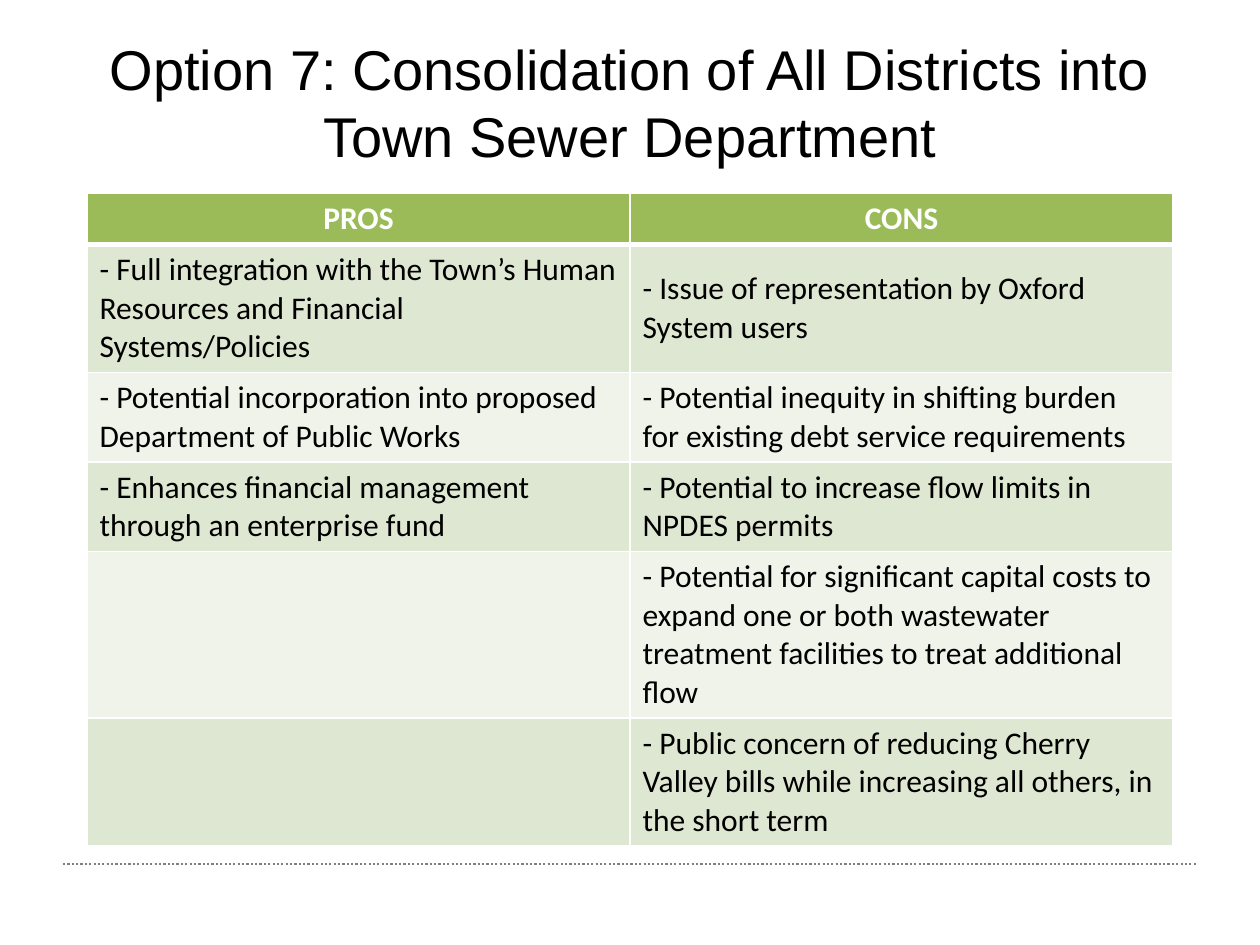
from typing import NamedTuple

from lxml import etree
from pptx import Presentation
from pptx.dml.color import RGBColor
from pptx.enum.dml import MSO_LINE
from pptx.enum.shapes import MSO_CONNECTOR
from pptx.enum.text import MSO_ANCHOR, PP_ALIGN
from pptx.oxml.ns import qn
from pptx.util import Inches, Pt

MIDDLE = MSO_ANCHOR.MIDDLE
CENTER = PP_ALIGN.CENTER
LEFT = PP_ALIGN.LEFT
STRAIGHT = MSO_CONNECTOR.STRAIGHT
DOTTED = MSO_LINE.ROUND_DOT

BLACK = "000000"
WHITE = "FFFFFF"
GRAY = "808080"
GREEN = "9BBB59"
BANDS = ("DEE7D1", "EFF3EA")

MARGIN = 0.69
CONTENT_WIDTH = 8.62
TABLE_TOP = 1.53
ROW_HEIGHT = 0.41
THIN, THICK = 1, 3


class Comparison(NamedTuple):
    pro: str
    con: str


HEADER = Comparison("PROS", "CONS")
COMPARISONS = [
    Comparison(
        "- Full integration with the Town’s Human Resources and Financial Systems/Policies",
        "- Issue of representation by Oxford System users",
    ),
    Comparison(
        "- Potential incorporation into proposed Department of Public Works",
        "- Potential inequity in shifting burden for existing debt service requirements",
    ),
    Comparison(
        "- Enhances financial management through an enterprise fund",
        "- Potential to increase flow limits in NPDES permits",
    ),
    Comparison(
        "",
        "- Potential for significant capital costs to expand one or both wastewater "
        "treatment facilities to treat additional flow",
    ),
    Comparison(
        "",
        "- Public concern of reducing Cherry Valley bills while increasing all others, "
        "in the short term",
    ),
]


def rgb(color: str) -> RGBColor:
    return RGBColor.from_string(color)


def format_paragraph(paragraph, font_name, size, color, alignment, bold=False) -> None:
    paragraph.alignment = alignment
    font = paragraph.font
    font.name = font_name
    font.size = Pt(size)
    font.bold = bold
    font.color.rgb = rgb(color)


def add_title(slide, text: str) -> None:
    title = slide.shapes.title
    title.left, title.top = Inches(MARGIN), Inches(0.08)
    title.width, title.height = Inches(CONTENT_WIDTH), Inches(1.45)
    frame = title.text_frame
    frame.word_wrap = True
    frame.vertical_anchor = MIDDLE
    frame.text = text
    format_paragraph(frame.paragraphs[0], "Arial", 32, BLACK, CENTER)


def add_footer_rule(slide) -> None:
    rule = slide.shapes.add_connector(
        STRAIGHT, Inches(0.5), Inches(6.86), Inches(9.5), Inches(6.86)
    )
    rule.line.color.rgb = rgb(GRAY)
    rule.line.width = Pt(1.25)
    rule.line.dash_style = DOTTED
    etree.SubElement(rule._element.spPr, qn("a:effectLst"))


def set_borders(cell, top: float, bottom: float) -> None:
    """Draw white cell borders, with the top and bottom widths in points."""
    properties = cell._tc.get_or_add_tcPr()
    widths = {"a:lnL": THIN, "a:lnR": THIN, "a:lnT": top, "a:lnB": bottom}
    for position, (tag, width) in enumerate(widths.items()):
        border = etree.Element(qn(tag), w=str(Pt(width)))
        fill = etree.SubElement(border, qn("a:solidFill"))
        etree.SubElement(fill, qn("a:srgbClr"), val=WHITE)
        properties.insert(position, border)


def fill_row(table, row: int, comparison: Comparison) -> None:
    is_header = row == 0
    for column, text in enumerate(comparison):
        cell = table.cell(row, column)
        cell.text = text
        cell.vertical_anchor = MIDDLE
        cell.fill.solid()
        cell.fill.fore_color.rgb = rgb(GREEN if is_header else BANDS[(row - 1) % 2])
        format_paragraph(
            cell.text_frame.paragraphs[0],
            "Calibri",
            18,
            WHITE if is_header else BLACK,
            CENTER if is_header else LEFT,
            bold=is_header,
        )
        set_borders(
            cell,
            top=THICK if row == 1 else THIN,
            bottom=THICK if is_header else THIN,
        )


def add_comparison_table(slide) -> None:
    rows = [HEADER, *COMPARISONS]
    table = slide.shapes.add_table(
        len(rows),
        len(HEADER),
        Inches(MARGIN),
        Inches(TABLE_TOP),
        Inches(CONTENT_WIDTH),
        Inches(ROW_HEIGHT * len(rows)),
    ).table
    for row, comparison in enumerate(rows):
        fill_row(table, row, comparison)


def main() -> None:
    presentation = Presentation()
    presentation.slide_width = Inches(10)
    presentation.slide_height = Inches(7.5)
    slide = presentation.slides.add_slide(presentation.slide_layouts[5])
    add_footer_rule(slide)
    add_title(slide, "Option 7: Consolidation of All Districts into Town Sewer Department")
    add_comparison_table(slide)
    presentation.save("out.pptx")


if __name__ == "__main__":
    main()
